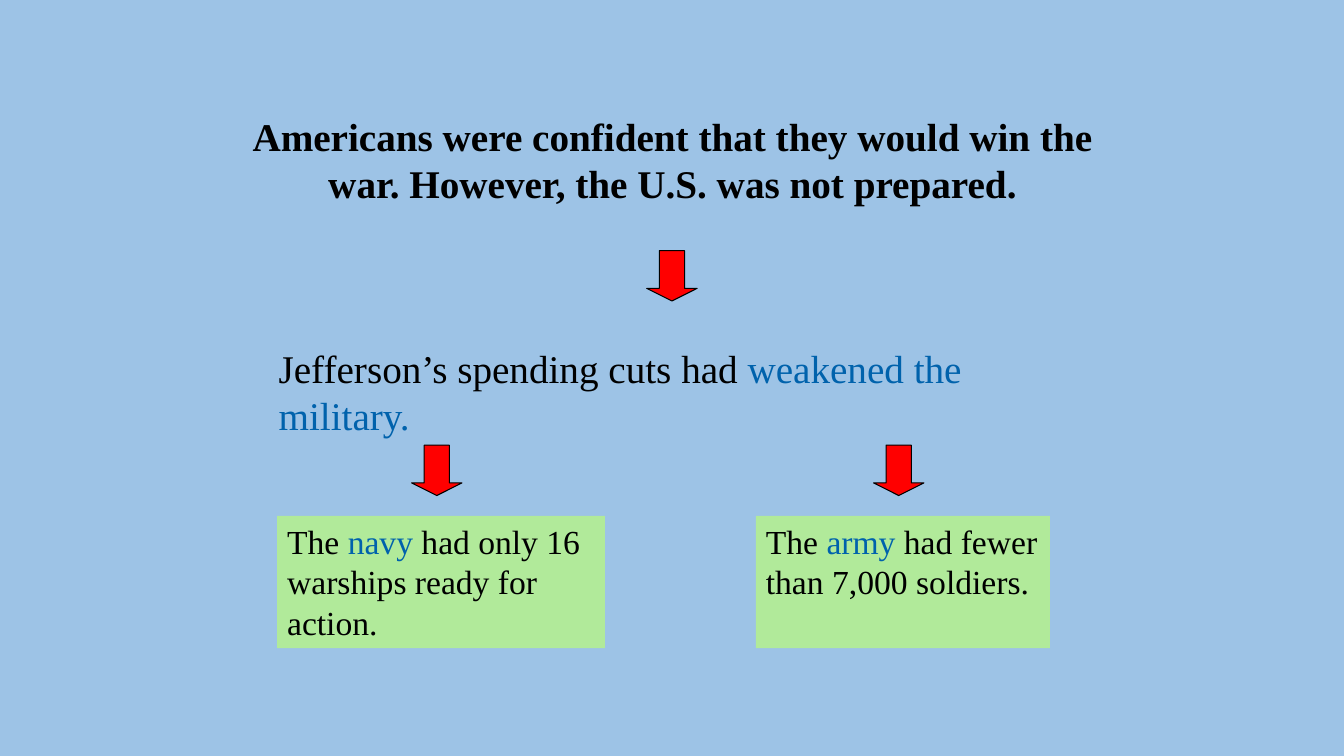
from dataclasses import dataclass

from pptx import Presentation
from pptx.dml.color import RGBColor
from pptx.enum.shapes import MSO_SHAPE
from pptx.enum.text import MSO_AUTO_SIZE, PP_ALIGN
from pptx.slide import Slide
from pptx.text.text import TextFrame
from pptx.util import Pt

RECTANGLE = MSO_SHAPE.RECTANGLE
DOWN_ARROW = MSO_SHAPE.DOWN_ARROW
LEFT = PP_ALIGN.LEFT
CENTER = PP_ALIGN.CENTER
GROW = MSO_AUTO_SIZE.SHAPE_TO_FIT_TEXT

FONT = "Times New Roman"
BLACK = "000000"
BLUE = "0062AC"
GREEN = "B1EA9A"
RED = "FF0000"
SKY = "9DC3E6"
ARROW_SIZE = 36


@dataclass
class Span:
    text: str
    color: str = BLACK


@dataclass
class Statement:
    left: float
    top: float
    width: float
    height: float
    size: float
    spans: list[Span]
    bold: bool = False
    align: PP_ALIGN = LEFT
    fill: str | None = None


@dataclass
class Arrow:
    left: float
    top: float


STATEMENTS = [
    Statement(165, 77, 630.5, 75, 28, [
        Span("Americans were confident that they would win the war. "
             "However, the U.S. was not prepared."),
    ], bold=True, align=CENTER),
    Statement(192, 242.5, 595, 41, 28, [
        Span("Jefferson’s spending cuts had "),
        Span("weakened the military.", BLUE),
    ]),
    Statement(198, 368.5, 234, 94.5, 24, [
        Span("The "),
        Span("navy", BLUE),
        Span(" had only 16 warships ready for action."),
    ], fill=GREEN),
    Statement(540, 368.5, 210, 94.5, 24, [
        Span("The "),
        Span("army", BLUE),
        Span(" had fewer than 7,000 soldiers."),
    ], fill=GREEN),
]
ARROWS = [Arrow(462, 179), Arrow(294, 318), Arrow(624, 318)]


def rgb(color: str) -> RGBColor:
    return RGBColor.from_string(color)


def write_text(frame: TextFrame, statement: Statement) -> None:
    frame.word_wrap = True
    frame.auto_size = GROW
    para = frame.paragraphs[0]
    para.alignment = statement.align
    for span in statement.spans:
        run = para.add_run()
        run.text = span.text
        run.font.name = FONT
        run.font.size = Pt(statement.size)
        run.font.bold = statement.bold
        run.font.color.rgb = rgb(span.color)


def add_statement(page: Slide, statement: Statement) -> None:
    box = page.shapes.add_textbox(
        Pt(statement.left), Pt(statement.top),
        Pt(statement.width), Pt(statement.height))
    if statement.fill:
        box.fill.solid()
        box.fill.fore_color.rgb = rgb(statement.fill)
    write_text(box.text_frame, statement)


def add_arrow(page: Slide, arrow: Arrow) -> None:
    shape = page.shapes.add_shape(
        DOWN_ARROW, Pt(arrow.left), Pt(arrow.top), Pt(ARROW_SIZE), Pt(ARROW_SIZE))
    shape.adjustments[0] = 0.5
    shape.adjustments[1] = 0.25
    shape.shadow.inherit = False
    shape.fill.solid()
    shape.fill.fore_color.rgb = rgb(RED)
    shape.line.color.rgb = rgb(BLACK)
    shape.line.width = Pt(0.75)


def main() -> None:
    deck = Presentation()
    deck.slide_width = Pt(960)
    deck.slide_height = Pt(540)
    page = deck.slides.add_slide(deck.slide_layouts[6])
    page.background.fill.solid()
    page.background.fill.fore_color.rgb = rgb(SKY)

    # Statements, from the claim down to the two consequences
    for statement in STATEMENTS:
        add_statement(page, statement)

    # Arrows between the statements
    for arrow in ARROWS:
        add_arrow(page, arrow)

    deck.save("out.pptx")


if __name__ == "__main__":
    main()
